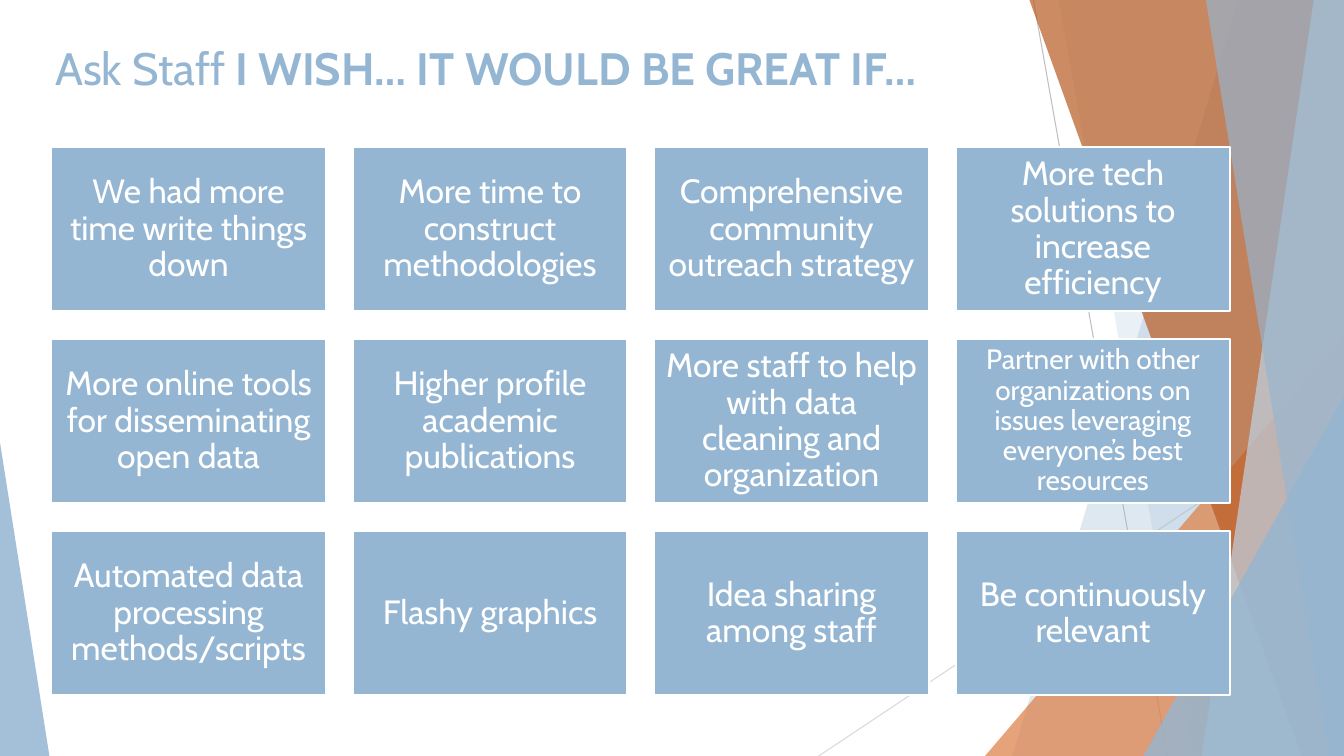
from lxml.etree import SubElement
from pptx import Presentation
from pptx.dml.color import RGBColor
from pptx.enum.shapes import MSO_CONNECTOR, MSO_SHAPE
from pptx.enum.text import MSO_ANCHOR, PP_ALIGN
from pptx.oxml.ns import qn
from pptx.util import Inches, Pt

WIDTH, HEIGHT = 13.33, 7.5
BLUE = RGBColor(0x94, 0xB6, 0xD2)
PALE = RGBColor(0xBF, 0xD3, 0xE4)
ORANGE = RGBColor(0xDD, 0x80, 0x47)
RUST = RGBColor(0xB9, 0x5B, 0x22)
GREY = RGBColor(0xBF, 0xBF, 0xBF)
SILVER = RGBColor(0xD9, 0xD9, 0xD9)
WHITE = RGBColor(0xFF, 0xFF, 0xFF)

WISHES = [
    ["We had more time write things down",
     "More time to construct methodologies",
     "Comprehensive community outreach strategy",
     "More tech solutions to increase efficiency"],
    ["More online tools for disseminating open data",
     "Higher profile academic publications",
     "More staff to help with data cleaning and organization",
     "Partner with other organizations on issues leveraging everyone’s best resources"],
    ["Automated data processing methods/scripts",
     "Flashy graphics",
     "Idea sharing among staff",
     "Be continuously relevant"],
]


class Deck:
    font = "Cabin"

    def __init__(self):
        self.file = Presentation()
        self.file.slide_width = Inches(WIDTH)
        self.file.slide_height = Inches(HEIGHT)
        self.shapes = self.file.slides.add_slide(self.file.slide_layouts[6]).shapes

    def line(self, start, end, color):
        ends = [Inches(v) for v in (*start, *end)]
        line = self.shapes.add_connector(MSO_CONNECTOR.STRAIGHT, *ends)
        line.line.color.rgb = color
        line.line.width = Pt(0.75)
        SubElement(line._element.spPr, qn("a:effectLst"))

    def tint(self, shape, color, alpha):
        """Fill a shape with a see-through colour, alpha in percent, and no outline."""
        shape.shadow.inherit = False
        shape.line.fill.background()
        shape.fill.solid()
        shape.fill.fore_color.rgb = color
        tone = shape._element.spPr.find(qn("a:solidFill"))[0]
        SubElement(tone, qn("a:alpha")).set("val", str(alpha * 1000))

    def band(self, top, foot, color, alpha):
        """Draw a full-height band from a slanted left edge to the slide's right edge."""
        points = [(top, 0), (WIDTH, 0), (WIDTH, HEIGHT), (foot, HEIGHT)]
        first, *rest = [(Inches(x), Inches(y)) for x, y in points]
        path = self.shapes.build_freeform(*first)
        path.add_line_segments(rest, close=True)
        self.tint(path.convert_to_shape(), color, alpha)

    def wedge(self, left, top, width, peak, color, alpha):
        """Draw a triangle that stands on the slide's bottom edge."""
        shape = self.shapes.add_shape(
            MSO_SHAPE.ISOSCELES_TRIANGLE, Inches(left), Inches(top),
            Inches(width), Inches(HEIGHT - top))
        shape.adjustments[0] = peak
        self.tint(shape, color, alpha)

    def style(self, run, size, color, bold=False):
        run.font.name = self.font
        run.font.size = Pt(size)
        run.font.bold = bold
        run.font.color.rgb = color

    def title(self, plain, strong):
        box = self.shapes.add_textbox(Inches(0.45), Inches(0.35), Inches(9.4), Inches(1.44))
        box.text_frame.word_wrap = True
        para = box.text_frame.paragraphs[0]
        for text, bold in ((plain, False), (strong, True)):
            run = para.add_run()
            run.text = text
            self.style(run, 32.4, BLUE, bold)

    def card(self, left, top, text):
        card = self.shapes.add_shape(
            MSO_SHAPE.RECTANGLE, Inches(left), Inches(top), Inches(2.72), Inches(1.63))
        card.shadow.inherit = False
        card.fill.solid()
        card.fill.fore_color.rgb = BLUE
        card.line.color.rgb = WHITE
        card.line.width = Pt(1.5)
        size, inset = (20, 0.08) if len(text) > 60 else (24, 0.1)
        frame = card.text_frame
        frame.text = text
        frame.word_wrap = True
        frame.vertical_anchor = MSO_ANCHOR.MIDDLE
        frame.margin_left = frame.margin_right = Inches(inset)
        frame.margin_top = frame.margin_bottom = Inches(inset)
        para = frame.paragraphs[0]
        para.alignment = PP_ALIGN.CENTER
        para.line_spacing = 0.9
        self.style(para.runs[0], size, WHITE)


def main():
    deck = Deck()
    deck.line((10.25, 0), (11.58, HEIGHT), GREY)
    deck.line((WIDTH, 4.03), (8.12, HEIGHT), SILVER)
    deck.band(12.28, 10.04, BLUE, 30)
    deck.band(10.5, 11.83, BLUE, 20)
    deck.wedge(9.77, 3.33, 3.56, 1, ORANGE, 72)
    deck.band(10.21, 12.91, RUST, 70)
    deck.band(13.03, 11.92, PALE, 70)
    deck.band(11.96, 13.18, BLUE, 65)
    deck.wedge(11.34, 3.93, 1.99, 1, BLUE, 80)
    deck.wedge(0, 4.39, 0.49, 0, BLUE, 85)
    deck.title("Ask Staff ", "I WISH… IT WOULD BE GREAT IF…")
    for row, texts in enumerate(WISHES):
        for col, text in enumerate(texts):
            deck.card(0.51 + 2.99 * col, 1.46 + 1.905 * row, text)
    deck.file.save("out.pptx")


if __name__ == "__main__":
    main()
